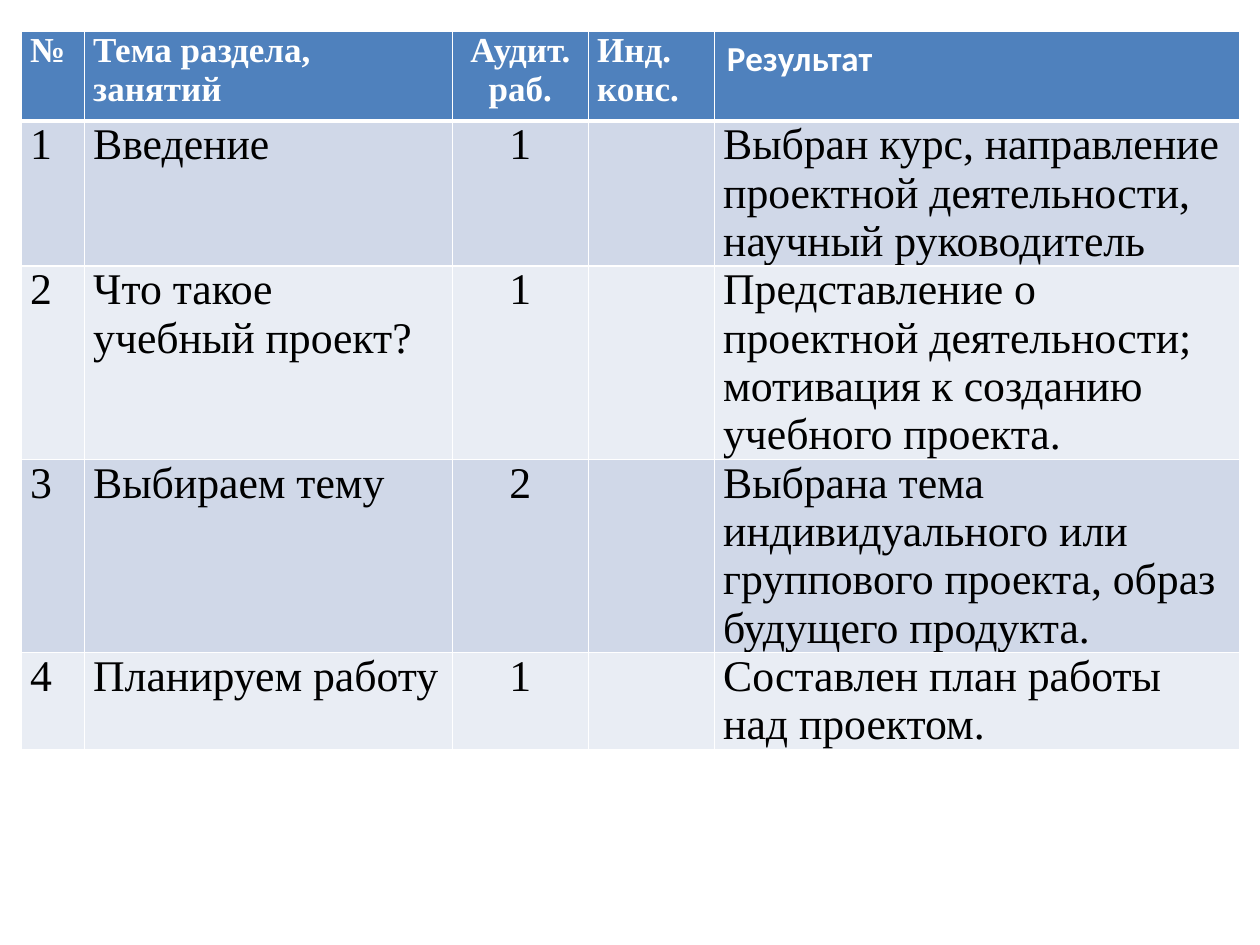
from lxml.etree import SubElement
from pptx import Presentation
from pptx.dml.color import RGBColor
from pptx.enum.text import PP_ALIGN as Align
from pptx.oxml.ns import qn
from pptx.util import Inches, Pt

# Content
HEADER = ["№", "Тема раздела, занятий", "Аудит.раб.", "Инд. конс.", "Результат"]
LESSONS = [
    ["1", "Введение", "1", "",
     "Выбран курс, направление проектной деятельности, научный руководитель"],
    ["2", "Что такое учебный проект?", "1", "",
     "Представление о проектной деятельности; мотивация к созданию учебного проекта."],
    ["3", "Выбираем тему", "2", "",
     "Выбрана тема индивидуального или группового проекта, образ будущего продукта."],
    ["4", "Планируем работу", "1", "", "Составлен план работы над проектом."],
]

# Layout and style
LEFT, TOP, ROW_HEIGHT = 0.17, 0.25, 0.71
COLUMNS = [0.5, 2.92, 1.08, 1, 4.17]
HOURS_COLUMN = 2
HEADER_FILL, BANDS = "4F81BD", ["D0D8E8", "E9EDF4"]
WHITE, BLACK = "FFFFFF", "000000"


def color(value):
    return RGBColor.from_string(value)


def add_borders(cell, bottom):
    """Draw white borders; they must be added before the cell's fill."""
    properties = cell._tc.get_or_add_tcPr()
    for side, width in (("L", 1), ("R", 1), ("T", 1), ("B", bottom)):
        line = SubElement(properties, qn(f"a:ln{side}"), w=str(Pt(width)))
        fill = SubElement(line, qn("a:solidFill"))
        SubElement(fill, qn("a:srgbClr"), val=WHITE)


def fill_cell(cell, text, fill, is_header, centered):
    add_borders(cell, 3 if is_header else 1)
    cell.fill.solid()
    cell.fill.fore_color.rgb = color(fill)
    if not text:
        return
    para = cell.text_frame.paragraphs[0]
    is_result = text == HEADER[-1]
    if not is_result:
        cell.margin_left = cell.margin_right = Inches(0.07)
        cell.margin_top = cell.margin_bottom = 0
        para.space_before = Pt(14)
    if centered:
        para.alignment = Align.CENTER
    span = para.add_run()
    span.text = text
    span.font.name = "Calibri" if is_result else "Times New Roman"
    span.font.size = Pt(20 if is_header else 25)
    span.font.bold = is_header
    span.font.color.rgb = color(WHITE if is_header else BLACK)


deck = Presentation()
deck.slide_width, deck.slide_height = Inches(10), Inches(7.5)
page = deck.slides.add_slide(deck.slide_layouts[6])

# Lesson plan table
rows = [HEADER] + LESSONS
table = page.shapes.add_table(
    len(rows), len(COLUMNS), Inches(LEFT), Inches(TOP),
    Inches(sum(COLUMNS)), Inches(ROW_HEIGHT * len(rows))).table
for column, width in zip(table.columns, COLUMNS):
    column.width = Inches(width)

for r, row in enumerate(rows):
    fill = BANDS[(r - 1) % 2] if r else HEADER_FILL
    for c, text in enumerate(row):
        fill_cell(table.cell(r, c), text, fill, r == 0, c == HOURS_COLUMN)

deck.save("out.pptx")
